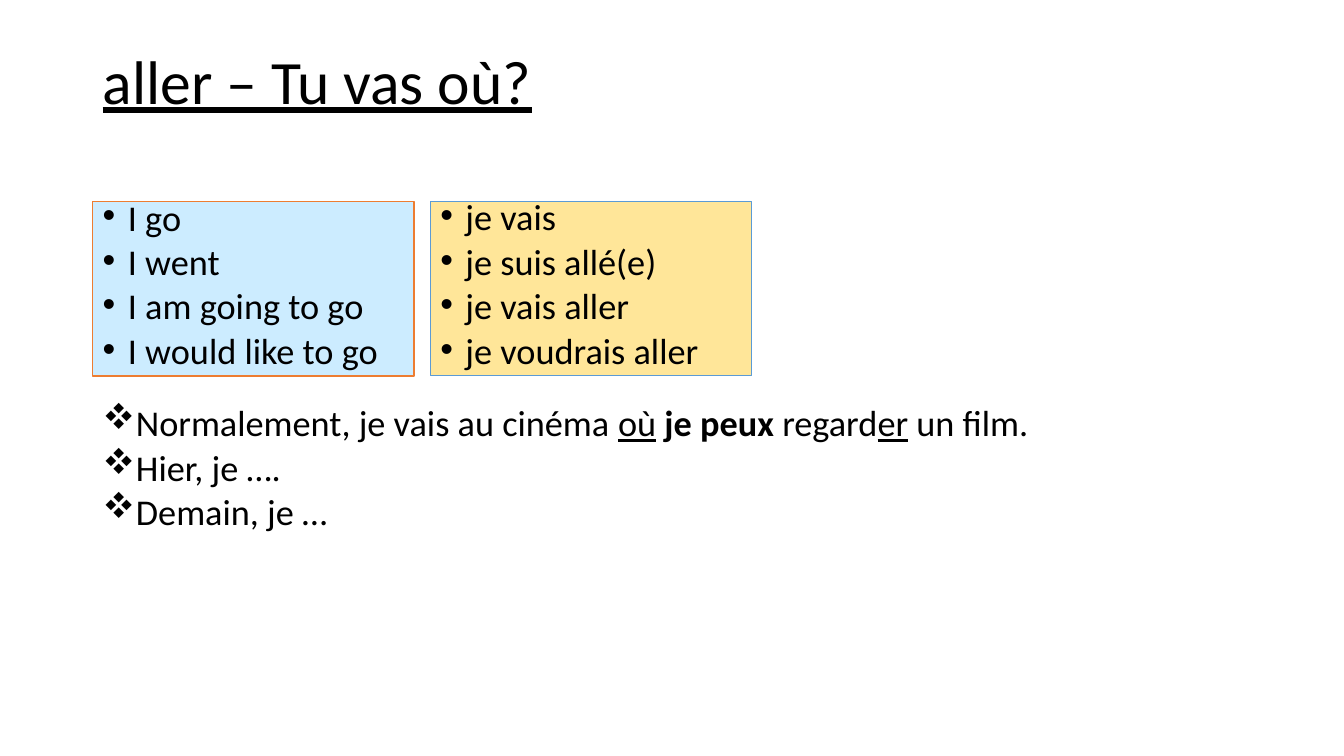
from dataclasses import dataclass

from lxml.etree import SubElement
from pptx import Presentation
from pptx.dml.color import RGBColor as RGB
from pptx.enum.shapes import MSO_SHAPE as Shape
from pptx.enum.text import MSO_ANCHOR as Anchor, MSO_AUTO_SIZE as AutoSize, PP_ALIGN as Align
from pptx.oxml.ns import qn
from pptx.util import Pt


@dataclass(frozen=True)
class Theme:
    font: str = "Calibri"
    title_size: float = 44
    body_size: float = 25.9
    text: RGB = RGB(0x00, 0x00, 0x00)
    english_fill: RGB = RGB(0xCC, 0xEC, 0xFF)
    english_line: RGB = RGB(0xED, 0x7D, 0x31)
    french_fill: RGB = RGB(0xFF, 0xE6, 0x99)
    french_line: RGB = RGB(0x5B, 0x9B, 0xD5)


THEME = Theme()
DOT = ("Arial", "•")
DIAMOND = ("Wingdings", "v")  # drawn as a four-part diamond

LEFT, WIDE = 66.2, 828
BOX_TOP, BOX_WIDTH, BOX_HEIGHT, BOX_GAP = 144, 229.7, 124.6, 11.5

ENGLISH = ["I go", "I went", "I am going to go", "I would like to go"]
FRENCH = ["je vais", "je suis allé(e)", "je vais aller", "je voudrais aller"]
# A sentence is a text, or a list of (text, format) parts
SENTENCES = [
    [("Normalement, je vais au cinéma ", {}), ("où", {"underline": True}), (" ", {}),
     ("je peux ", {"bold": True}), ("regard", {}), ("er", {"underline": True}),
     (" un film.", {})],
    "Hier, je ….",
    "Demain, je …",
]


def place(sp, left, top, width, height):
    sp.left, sp.top, sp.width, sp.height = Pt(left), Pt(top), Pt(width), Pt(height)


def add_text(p, text, size=THEME.body_size, bold=False, underline=False):
    r = p.add_run()
    r.text = text
    r.font.name, r.font.size = THEME.font, Pt(size)
    r.font.bold, r.font.underline = bold, underline
    r.font.color.rgb = THEME.text


def prepare_frame(sp, anchor):
    tf = sp.text_frame
    tf.word_wrap = True
    tf.auto_size = AutoSize.NONE
    tf.vertical_anchor = anchor
    return tf


def set_bullet(p, bullet):
    font, char = bullet
    pPr = p._p.get_or_add_pPr()
    pPr.set("marL", str(Pt(18)))
    pPr.set("indent", str(-Pt(18)))
    SubElement(pPr, qn("a:buFont"), typeface=font)
    SubElement(pPr, qn("a:buChar"), char=char)


def fill_list(sp, items, bullet):
    tf = prepare_frame(sp, Anchor.TOP)
    for i, item in enumerate(items):
        p = tf.add_paragraph() if i else tf.paragraphs[0]
        p.alignment = Align.LEFT
        p.line_spacing = 0.7
        p.space_before, p.space_after = Pt(10), Pt(0)
        set_bullet(p, bullet)
        for text, style in [(item, {})] if isinstance(item, str) else item:
            add_text(p, text, **style)


def paint(sp, fill, line, width):
    sp.fill.solid()
    sp.fill.fore_color.rgb = fill
    sp.line.color.rgb = line
    sp.line.width = Pt(width)


def fill_title(sp, text):
    p = prepare_frame(sp, Anchor.MIDDLE).paragraphs[0]
    p.alignment = Align.LEFT
    p.line_spacing = 0.9
    add_text(p, text, size=THEME.title_size, underline=True)


def main():
    prs = Presentation()
    prs.slide_width, prs.slide_height = Pt(960), Pt(540)
    s = prs.slides.add_slide(prs.slide_layouts.get_by_name("Two Content"))
    title, english, sentences = s.placeholders

    # Title
    place(title, LEFT, 28.8, WIDE, 62.6)
    fill_title(title, "aller – Tu vas où?")

    # English phrases
    place(english, LEFT, BOX_TOP, BOX_WIDTH, BOX_HEIGHT)
    paint(english, THEME.english_fill, THEME.english_line, 1)
    fill_list(english, ENGLISH, DOT)

    # Example sentences
    place(sentences, LEFT, 290.9, WIDE, 121)
    fill_list(sentences, SENTENCES, DIAMOND)

    # French phrases
    french_left = LEFT + BOX_WIDTH + BOX_GAP
    french = s.shapes.add_shape(Shape.RECTANGLE, Pt(french_left), Pt(BOX_TOP),
                                Pt(BOX_WIDTH), Pt(BOX_HEIGHT))
    french.shadow.inherit = False
    paint(french, THEME.french_fill, THEME.french_line, 0.75)
    fill_list(french, FRENCH, DOT)

    prs.save("out.pptx")


if __name__ == "__main__":
    main()
